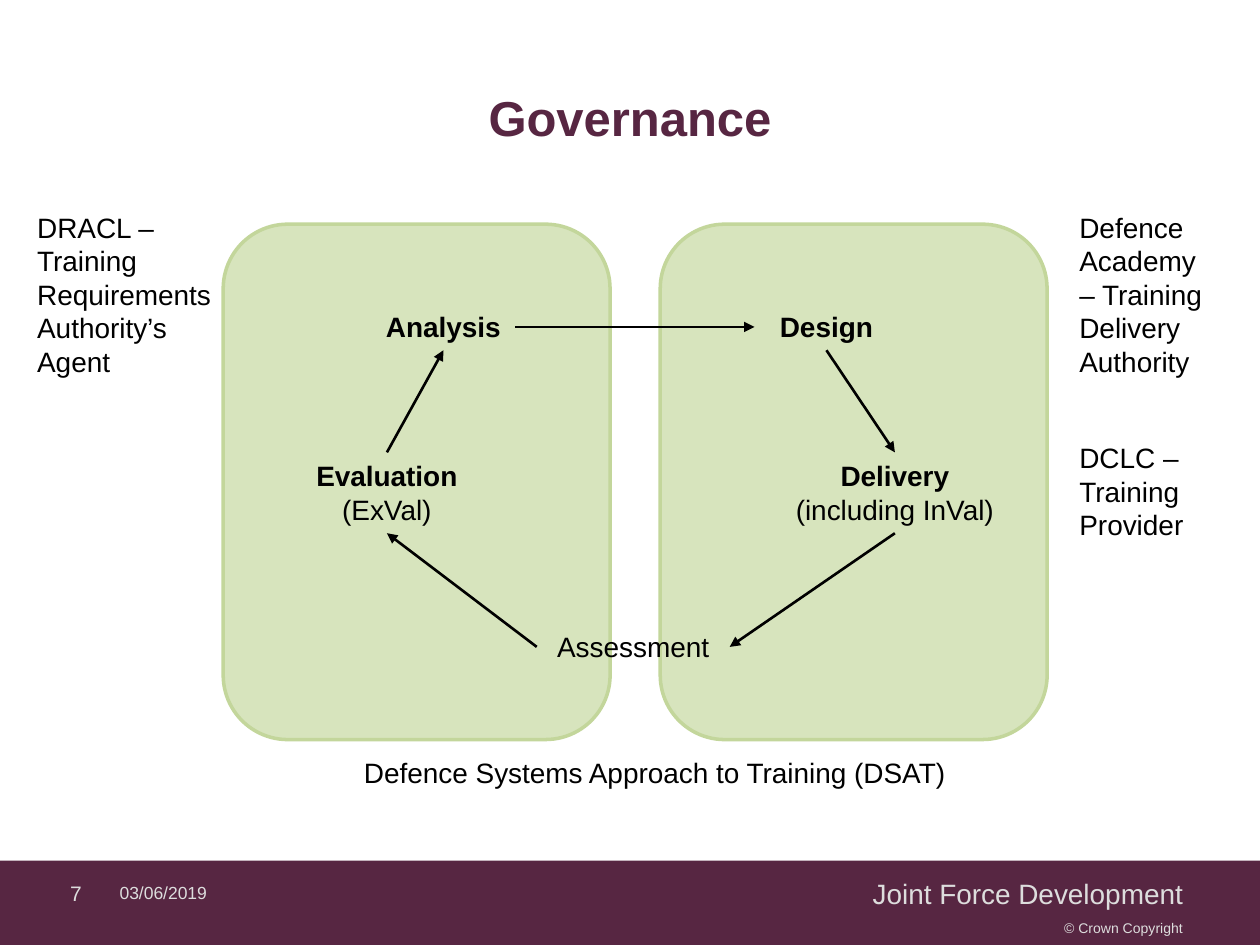
import pptx
import pptx.dml.color
import pptx.enum.shapes
import pptx.enum.text
import pptx.oxml
import pptx.oxml.ns
import pptx.util
from pptx.util import Cm

PLUM = pptx.dml.color.RGBColor(0x57, 0x26, 0x42)
PALE_GREEN = pptx.dml.color.RGBColor(0xD7, 0xE4, 0xBD)
GREEN = pptx.dml.color.RGBColor(0xC3, 0xD6, 0x9B)
LIGHT_GREY = pptx.dml.color.RGBColor(0xDD, 0xDD, 0xDD)
BLACK = pptx.dml.color.RGBColor(0, 0, 0)
ALIGN = pptx.enum.text.PP_ALIGN
ANCHOR = pptx.enum.text.MSO_ANCHOR
SHAPE = pptx.enum.shapes.MSO_SHAPE


def style_paragraph(paragraph, size, color, alignment, bold=False):
    paragraph.alignment = alignment
    paragraph.font.name = "Arial"
    paragraph.font.size = pptx.util.Pt(size)
    paragraph.font.color.rgb = color
    paragraph.font.bold = bold


def add_text(box, lines, size=16, color=BLACK, alignment=ALIGN.LEFT, bold_first=False):
    """Add a wrapped text box; box is left, top, width, height in cm."""
    shape = slide.shapes.add_textbox(*map(Cm, box))
    frame = shape.text_frame
    frame.word_wrap = True
    frame.text = "\n".join(lines)
    for index, paragraph in enumerate(frame.paragraphs):
        style_paragraph(paragraph, size, color, alignment, bold_first and index == 0)
    return shape


presentation = pptx.Presentation()
presentation.slide_width = Cm(25.4)
presentation.slide_height = Cm(19.05)
slide = presentation.slides.add_slide(presentation.slide_layouts[5])

# Footer
bar = slide.shapes.add_shape(SHAPE.RECTANGLE, 0, Cm(17.35), Cm(25.4), Cm(1.8))
bar.shadow.inherit = False
bar.fill.solid()
bar.fill.fore_color.rgb = PLUM
bar.line.fill.background()

for box, text, size in [
    ((9, 18.2, 15.1, 1), "© Crown Copyright", 8),
    ((9, 17.5, 15.1, 1), "Joint Force Development", 16),
    ((1.9, 17.5, 2.52, 1), "03/06/2019", 10),
    ((0, 17.5, 1.9, 1), "7", 12),
]:
    footer = add_text(box, [text], size, LIGHT_GREY, ALIGN.RIGHT)
    footer.text_frame.vertical_anchor = ANCHOR.MIDDLE

# Title
title = slide.shapes.title
title.left, title.top, title.width, title.height = Cm(1.27), Cm(0.76), Cm(22.86), Cm(3.18)
title.text_frame.text = "Governance"
title.text_frame.vertical_anchor = ANCHOR.MIDDLE
style_paragraph(title.text_frame.paragraphs[0], 28, PLUM, ALIGN.CENTER, bold=True)

# Areas of responsibility
for left in (4.5, 13.31):
    panel = slide.shapes.add_shape(
        SHAPE.ROUNDED_RECTANGLE, Cm(left), Cm(4.52), Cm(7.8), Cm(10.39))
    panel.shadow.inherit = False
    panel.fill.solid()
    panel.fill.fore_color.rgb = PALE_GREEN
    panel.line.color.rgb = GREEN
    panel.line.width = pptx.util.Pt(2)

for box, lines in [
    ((0.5, 4.11, 4.2, 3.68), ["DRACL – Training Requirements Authority’s Agent"]),
    ((21.51, 4.11, 3, 3.68), ["Defence Academy – Training Delivery", "Authority"]),
    ((21.51, 8.76, 3, 2.31), ["DCLC – Training Provider"]),
]:
    add_text(box, lines)

# Training cycle, in clockwise order
stages = {}
for box, lines, bold in [
    ((7.49, 6.12, 2.9, 0.94), ["Analysis"], True),
    ((15.21, 6.12, 2.9, 0.94), ["Design"], True),
    ((15.69, 9.12, 4.7, 1.63), ["Delivery", "(including InVal)"], True),
    ((10.82, 12.57, 3.89, 0.94), ["Assessment"], False),
    ((6.1, 9.12, 3.4, 1.63), ["Evaluation", "(ExVal)"], True),
]:
    stages[lines[0]] = add_text(box, lines, alignment=ALIGN.CENTER, bold_first=bold)

add_text((6.1, 15.11, 14.2, 0.94), ["Defence Systems Approach to Training (DSAT)"],
         alignment=ALIGN.CENTER)

for start, start_side, end, end_side in [
    ("Analysis", 3, "Design", 1),
    ("Design", 2, "Delivery", 0),
    ("Delivery", 2, "Assessment", 3),
    ("Assessment", 1, "Evaluation", 2),
    ("Evaluation", 0, "Analysis", 2),
]:
    arrow = slide.shapes.add_connector(
        pptx.enum.shapes.MSO_CONNECTOR.STRAIGHT, 0, 0, 0, 0)
    arrow.begin_connect(stages[start], start_side)
    arrow.end_connect(stages[end], end_side)
    arrow.line.color.rgb = BLACK
    arrow.line.width = pptx.util.Pt(1.5)
    head = pptx.oxml.parse_xml(
        '<a:tailEnd %s type="triangle"/>' % pptx.oxml.ns.nsdecls("a"))
    arrow.line._get_or_add_ln().append(head)
    no_shadow = pptx.oxml.parse_xml("<a:effectLst %s/>" % pptx.oxml.ns.nsdecls("a"))
    arrow._element.spPr.append(no_shadow)

presentation.save("out.pptx")
